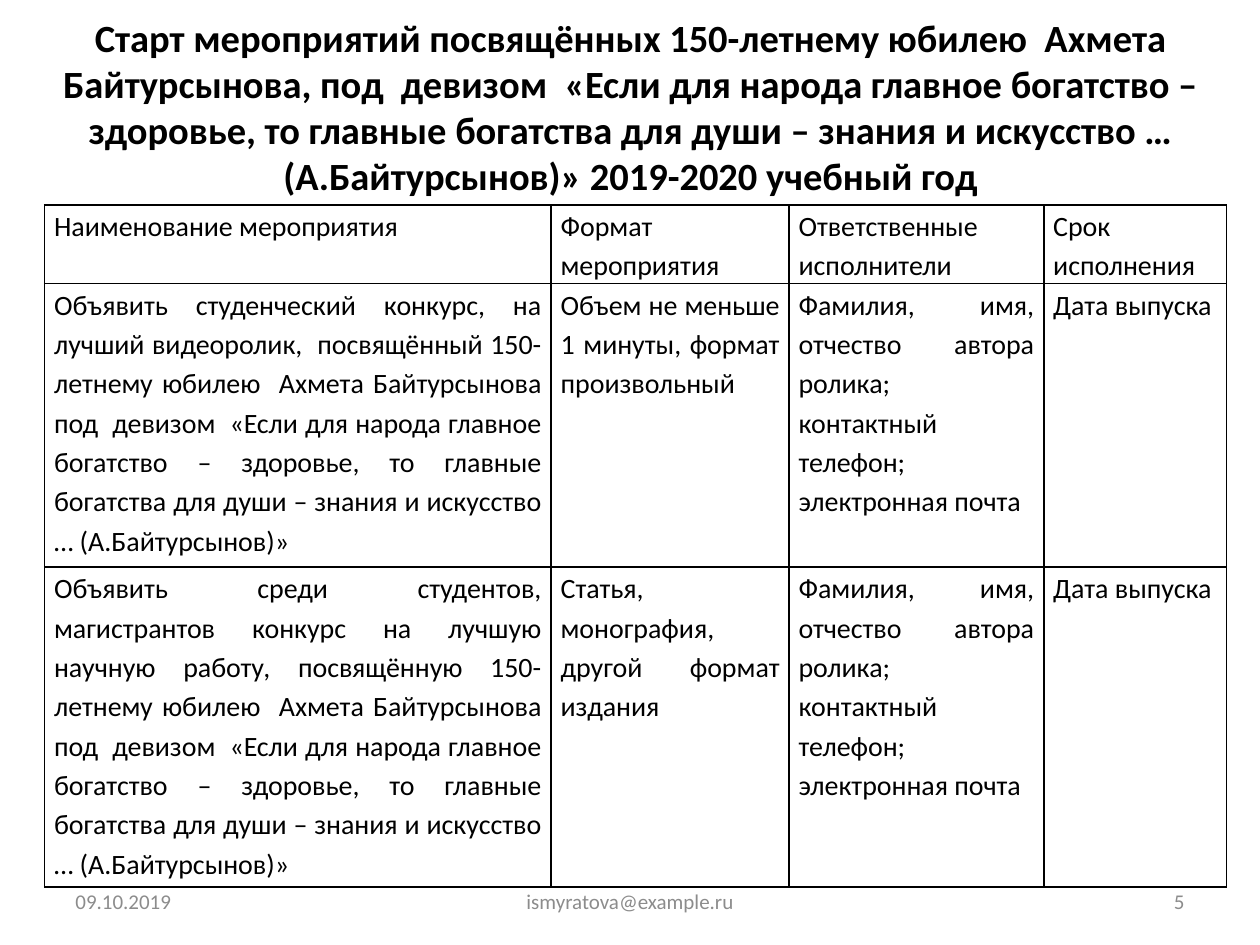
from dataclasses import dataclass

from lxml.etree import SubElement
from pptx import Presentation
from pptx.dml.color import RGBColor as RGB
from pptx.enum.text import MSO_ANCHOR as Anchor, PP_ALIGN as Align
from pptx.oxml.ns import qn
from pptx.util import Pt

FONT = "Calibri"
COLORS = {"text": "000000", "border": "000000", "footer": "8C8C8C"}

MOTTO = ("под  девизом  «Если для народа главное богатство – здоровье, то главные "
         "богатства для души – знания и искусство … (А.Байтурсынов)»")
JUBILEE = "150-летнему юбилею  Ахмета Байтурсынова"
AUTHOR = "Фамилия, имя, отчество автора ролика; \nконтактный телефон; электронная почта"
RELEASE = "Дата выпуска"

COL_WIDTHS = (289.5, 136, 145.5, 104.5)
ROW_HEIGHTS = (40.3, 162, 183)
ROWS = (
    ("Наименование мероприятия", "Формат мероприятия ",
     "Ответственные  исполнители", "Срок исполнения"),
    (f"Объявить студенческий конкурс, на лучший видеоролик,  посвящённый {JUBILEE} {MOTTO}",
     "Объем не меньше 1 минуты, формат произвольный", AUTHOR, RELEASE),
    ("Объявить среди студентов, магистрантов конкурс на лучшую научную работу, "
     f"посвящённую {JUBILEE} {MOTTO}",
     "Статья, монография, другой формат издания", AUTHOR, RELEASE),
)


@dataclass
class Label:
    text: str
    box: tuple
    align: Align
    size: float = 12
    color: str = "footer"
    bold: bool = False


LABELS = (
    Label(f"Старт мероприятий посвящённых {JUBILEE}, {MOTTO} 2019-2020 учебный год",
          (14.4, 9.4, 692, 102.2), Align.CENTER, 22, "text", True),
    Label("09.10.2019", (36, 500.5, 168, 28.75), Align.LEFT),
    Label("ismyratova@example.ru", (246, 500.5, 228, 28.75), Align.CENTER),
    Label("5", (516, 500.5, 168, 28.75), Align.RIGHT),
)


def set_attrs(obj, values: dict) -> None:
    for name, value in values.items():
        setattr(obj, name, value)


def write_text(tf, text: str, size: float, color: str, bold: bool = False, **para) -> None:
    """Fill a text frame, one paragraph per line of text."""
    for i, line in enumerate(text.split("\n")):
        p = tf.add_paragraph() if i else tf.paragraphs[0]
        set_attrs(p, para)
        r = p.add_run()
        r.text = line
        set_attrs(r.font, {"name": FONT, "size": Pt(size), "bold": bold})
        r.font.color.rgb = RGB.from_string(COLORS[color])


def add_label(s, label: Label) -> None:
    tf = s.shapes.add_textbox(*map(Pt, label.box)).text_frame
    set_attrs(tf, {"word_wrap": True, "vertical_anchor": Anchor.MIDDLE})
    write_text(tf, label.text, label.size, label.color, label.bold, alignment=label.align)


def add_borders(cell) -> None:
    """Outline a cell; border lines must precede the fill in tcPr."""
    tc_pr = cell._tc.get_or_add_tcPr()
    for side in ("lnL", "lnR", "lnT", "lnB"):
        ln = SubElement(tc_pr, qn(f"a:{side}"), w=str(Pt(1)))
        fill = SubElement(ln, qn("a:solidFill"))
        SubElement(fill, qn("a:srgbClr"), val=COLORS["border"])


def add_events_table(s) -> None:
    frame = s.shapes.add_table(len(ROWS), len(COL_WIDTHS), Pt(25.5), Pt(117),
                               Pt(sum(COL_WIDTHS)), Pt(sum(ROW_HEIGHTS)))
    table = frame.table
    set_attrs(table, {"first_row": False, "horz_banding": False})
    for col, width in zip(table.columns, COL_WIDTHS):
        col.width = Pt(width)
    for row, height, texts in zip(table.rows, ROW_HEIGHTS, ROWS):
        row.height = Pt(height)
        for cell, text in zip(row.cells, texts):
            set_attrs(cell, {"margin_left": Pt(5.4), "margin_right": Pt(5.4),
                             "margin_top": 0, "margin_bottom": 0})
            add_borders(cell)
            cell.fill.background()
            write_text(cell.text_frame, text, 16, "text",
                       alignment=Align.JUSTIFY, line_spacing=1.15)


def main() -> None:
    prs = Presentation()
    set_attrs(prs, {"slide_width": Pt(720), "slide_height": Pt(540)})
    s = prs.slides.add_slide(prs.slide_layouts[6])
    add_events_table(s)
    for label in LABELS:
        add_label(s, label)
    prs.save("out.pptx")


if __name__ == "__main__":
    main()
